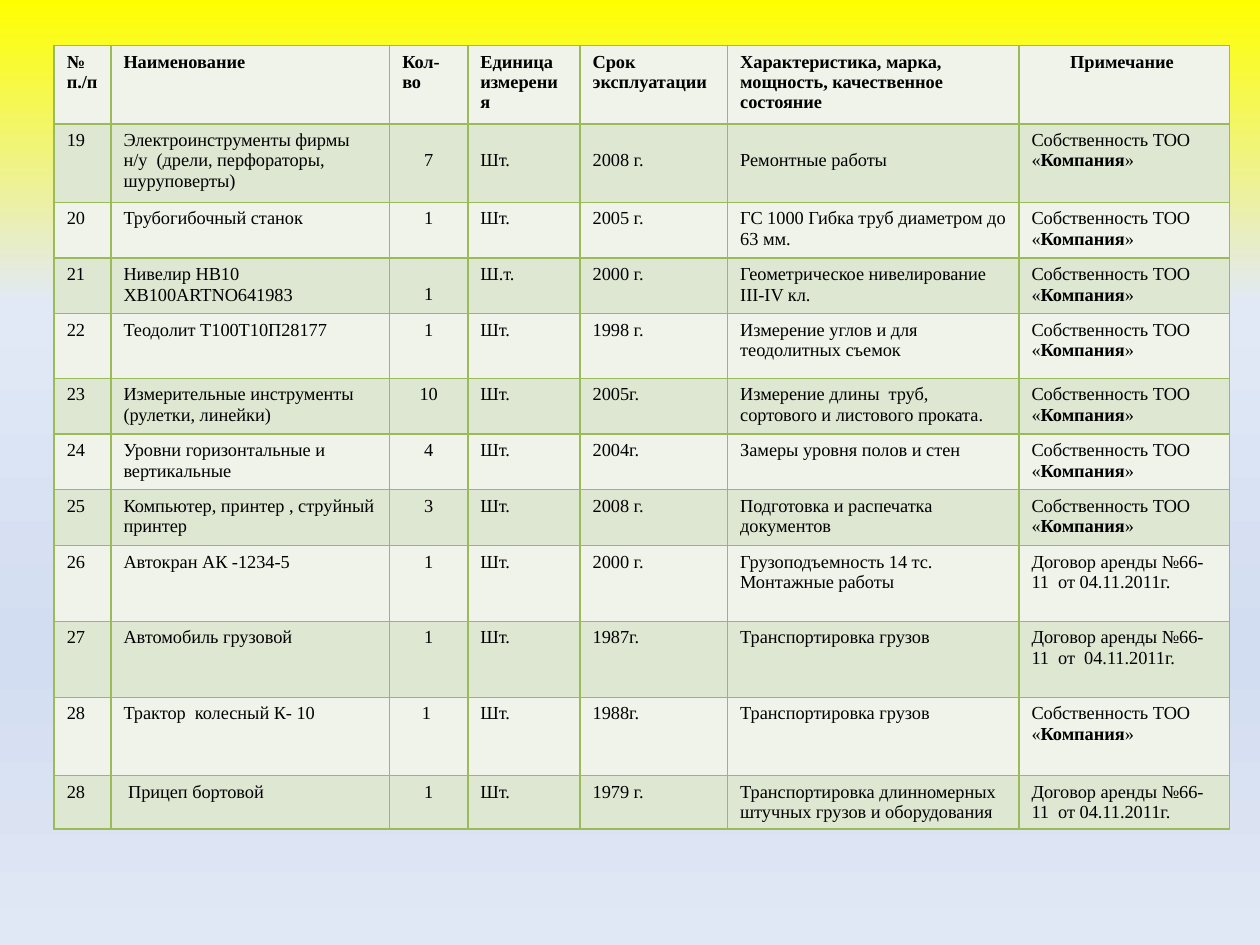
from lxml import etree
from pptx import Presentation
from pptx.dml.color import RGBColor
from pptx.enum.text import PP_ALIGN
from pptx.oxml.ns import qn
from pptx.util import Inches, Pt

CENTER = PP_ALIGN.CENTER
FONT, SIZE = "Times New Roman", 10.5
BLANK_LAYOUT = 6
COLORS = {"text": "000000", "border": "9BBB59", "light": "EFF3EA", "dark": "DEE7D1"}
BACKGROUND = [(0, "FFFF00"), (32, "E2E9F6"), (69, "D2DDF1"), (100, "E1E8F5")]

TABLE_BOX = (0.43, 0.36, 9.33, 6.22)
COLUMNS = [0.45, 2.21, 0.62, 0.89, 1.17, 2.31, 1.67]
ROWS = [0.62, 0.62, 0.44, 0.44, 0.51, 0.44, 0.44, 0.44, 0.6, 0.6, 0.62, 0.42]
COUNT_COLUMN, NOTE_COLUMN = 2, 6
MARGIN_TOP, LINE = 0.05, 0.16
LOWERED = {(1, 2), (1, 3), (1, 4), (1, 5), (3, 2)}  # cells that start one line lower

# Text pieces: plain and bold runs alternate
OWNED = ["Собственность ТОО «", "Компания", "»"]
LEASED = ["Договор аренды №66-11  от 04.11.2011г."]
LEASED_WIDE = ["Договор аренды №66-11  от  04.11.2011г."]
HEADER = ["№ п./п", "Наименование", "Кол-во", "Единица\nизмерения",
          "Срок\nэксплуатации",
          "Характеристика, марка, мощность, качественное состояние", "Примечание "]
EQUIPMENT = [
    ["19", "Электроинструменты фирмы н/у  (дрели, перфораторы, шуруповерты)",
     "7", "Шт.", "2008 г.", "Ремонтные работы", OWNED],
    ["20", "Трубогибочный станок", "1", "Шт.", "2005 г.",
     "ГС 1000 Гибка труб диаметром до 63 мм.", OWNED],
    ["21", "Нивелир НВ10 XB100ARTNO641983", "1", "Ш.т.", "2000 г.",
     "Геометрическое нивелирование III-IV кл.", OWNED],
    ["22", "Теодолит T100T10П28177", "1", "Шт.", "1998 г.",
     "Измерение углов и для теодолитных съемок", OWNED],
    ["23", "Измерительные инструменты (рулетки, линейки)", "10", "Шт.", "2005г.",
     "Измерение длины  труб, сортового и листового проката.", OWNED],
    ["24", "Уровни горизонтальные и вертикальные", "4", "Шт.", "2004г.",
     "Замеры уровня полов и стен", OWNED],
    ["25", "Компьютер, принтер , струйный принтер", "3", "Шт.", "2008 г.",
     "Подготовка и распечатка документов", OWNED],
    ["26", "Автокран АК -1234-5", "1", "Шт.", "2000 г.",
     "Грузоподъемность 14 тс. Монтажные работы", LEASED],
    ["27", "Автомобиль грузовой", "1", "Шт.", "1987г.",
     "Транспортировка грузов", LEASED_WIDE],
    ["28", "Трактор  колесный К- 10", "1 ", "Шт.", "1988г.",
     "Транспортировка грузов", OWNED],
    ["28", " Прицеп бортовой", "1", "Шт.", "1979 г.",
     "Транспортировка длинномерных штучных грузов и оборудования", LEASED],
]


def paint_background(s):
    fill = s.background.fill
    fill.gradient()
    fill.gradient_angle = 270
    stops = s.background._cSld.find(".//" + qn("a:gsLst"))
    for stop in list(stops):
        stops.remove(stop)
    for percent, color in BACKGROUND:
        stop = etree.SubElement(stops, qn("a:gs"), pos=str(percent * 1000))
        etree.SubElement(stop, qn("a:srgbClr"), val=color)


def set_borders(cell):
    props = cell._tc.get_or_add_tcPr()
    for i, side in enumerate(("lnL", "lnR", "lnT", "lnB")):
        line = etree.Element(qn("a:" + side), w=str(Pt(1)))
        fill = etree.SubElement(line, qn("a:solidFill"))
        etree.SubElement(fill, qn("a:srgbClr"), val=COLORS["border"])
        props.insert(i, line)


def add_run(p, text, bold):
    r = p.add_run()
    r.text = text
    r.font.name, r.font.size, r.font.bold = FONT, Pt(SIZE), bold
    r.font.color.rgb = RGBColor.from_string(COLORS["text"])


def write_cell(cell, content, header, centered):
    tf = cell.text_frame
    paragraphs = [content] if isinstance(content, list) else [[t] for t in content.split("\n")]
    for i, pieces in enumerate(paragraphs):
        p = tf.add_paragraph() if i else tf.paragraphs[0]
        if centered:
            p.alignment = CENTER
        for j, text in enumerate(pieces):
            add_run(p, text, header or j % 2 == 1)


def add_equipment_table(s, box):
    data = [HEADER] + EQUIPMENT
    table = s.shapes.add_table(len(data), len(COLUMNS), *map(Inches, box)).table
    for column, share in zip(table.columns, COLUMNS):
        column.width = Inches(box[2] * share / sum(COLUMNS))
    for row, share in zip(table.rows, ROWS):
        row.height = Inches(box[3] * share / sum(ROWS))
    for i, values in enumerate(data):
        for j, content in enumerate(values):
            cell = table.cell(i, j)
            cell.fill.solid()
            cell.fill.fore_color.rgb = RGBColor.from_string(COLORS["dark" if i % 2 else "light"])
            set_borders(cell)
            if (i, j) in LOWERED:
                cell.margin_top = Inches(MARGIN_TOP + LINE)
            header = i == 0
            centered = j == (NOTE_COLUMN if header else COUNT_COLUMN)
            write_cell(cell, content, header, centered)


def main():
    prs = Presentation()
    prs.slide_width, prs.slide_height = Inches(10), Inches(7.5)
    s = prs.slides.add_slide(prs.slide_layouts[BLANK_LAYOUT])
    paint_background(s)
    add_equipment_table(s, TABLE_BOX)
    prs.save("out.pptx")


if __name__ == "__main__":
    main()
